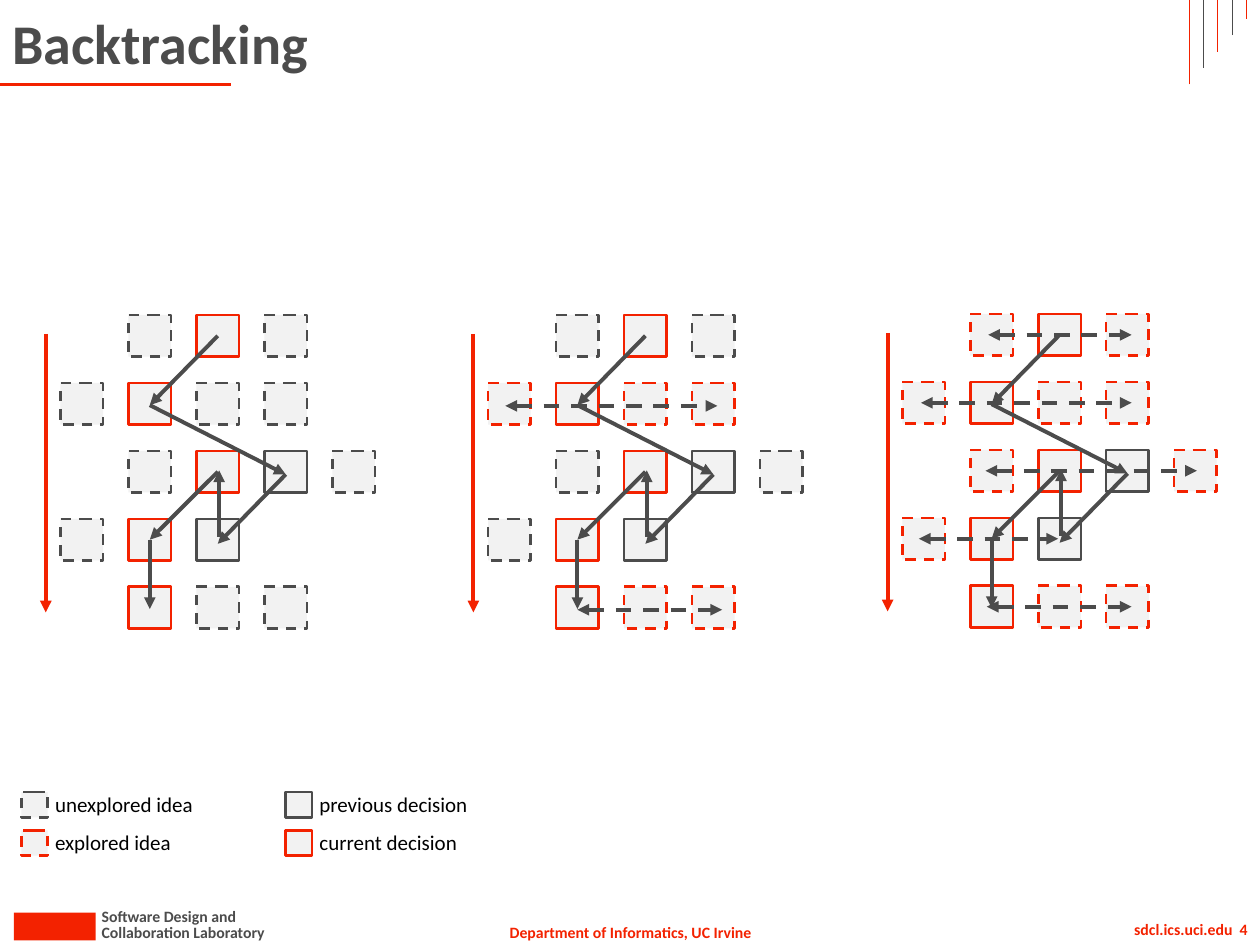
import pptx
import pptx.dml.color
import pptx.enum.dml
import pptx.enum.shapes
import pptx.enum.text
import pptx.oxml
import pptx.oxml.ns
import pptx.util
from pptx.util import Cm

RED, GREY, PALE, BLACK = "F32200", "4C4C4C", "F2F2F2", "000000"

# Kind of idea: outline colour, dashed
KINDS = {
    "u": (GREY, True),    # unexplored idea
    "e": (RED, True),     # explored idea
    "p": (GREY, False),   # previous decision
    "c": (RED, False),    # current decision
}

# Grid lengths in cm; a point (column, row) is the centre of that square
PITCH, SQUARE_WIDTH, SQUARE_HEIGHT = 1.37, 0.86, 0.84

# Each panel: left, top, rows of squares, dashed spans (row, first column, last column)
PANELS = [
    (1.22, 6.35, [".ucu.", "ucuu.", ".ucpu", "ucp..", ".cuu."], []),
    (9.84, 6.35, [".ucu.", "ecee.", ".ucpu", "ucp..", ".cee."],
     [(1.03, -0.06, 3.06), (4.03, 1, 3.13)]),
    (18.19, 6.33, [".ece.", "ecee.", ".ecpe", "ecp..", ".cee."],
     [(0, 0.95, 3.06), (1, -0.04, 3.06), (2, 0.91, 4.02),
      (3, -0.07, 1.98), (4, 0.93, 3.06)]),
]
TIME_ARROW = ((-0.53, -0.03), (-0.53, 4.07))
DECISION_STEPS = [
    ((2, 0), (1, 1.02)),
    ((1, 1.02), (3, 2.04)),
    ((3, 2.04), (2, 3.06)),
    ((2.02, 2.96), (2.02, 1.98)),
    ((2, 2), (1, 3)),
    ((1, 3), (1, 4.02)),
]

# Legend: label, kind, column, row, label width
LEGEND = [
    ("unexplored idea", "u", 0, 0, 3.33),
    ("explored idea", "e", 0, 1, 2.87),
    ("previous decision", "p", 1, 0, 3.53),
    ("current decision", "c", 1, 1, 3.3),
]

# Text, left, top, width, height, size, colour, alignment, wraps
FRAME_TEXTS = [
    ("Department of Informatics, UC Irvine", 9.98, 18.47, 5.46, 0.64, 9, RED, "CENTER", False),
    ("Collaboration Laboratory", 1.8, 18.47, 3.89, 0.64, 9, GREY, "LEFT", False),
    ("Software Design and", 1.8, 18.16, 3.28, 0.64, 9, GREY, "LEFT", False),
    ("sdcl.ics.uci.edu  4", 19.91, 18.42, 5.49, 0.64, 9, RED, "RIGHT", True),
    ("Backtracking", 0, 0, 23.5, 1.7, 32, GREY, "LEFT", True),
]
FOOTER_BLOCK = (0.28, 18.4, 1.65, 0.56)
CORNER_LINES = [1.7, 1.37, 1.04, 0.71, 0.38]


def colour(value):
    return pptx.dml.color.RGBColor.from_string(value)


def add_text(page, text, left, top, width, height, size, ink, align="LEFT",
             wraps=False, bold=True):
    box = page.shapes.add_textbox(Cm(left), Cm(top), Cm(width), Cm(height))
    frame = box.text_frame
    frame.text = text
    frame.word_wrap = wraps
    frame.vertical_anchor = pptx.enum.text.MSO_ANCHOR.MIDDLE
    para = frame.paragraphs[0]
    para.alignment = pptx.enum.text.PP_ALIGN[align]
    font = para.runs[0].font
    font.name, font.size, font.bold = "Calibri", pptx.util.Pt(size), bold
    font.color.rgb = colour(ink)


def style_line(line, ink, width, dashed):
    line.color.rgb = colour(ink)
    line.width = pptx.util.Pt(width)
    if dashed:
        line.dash_style = pptx.enum.dml.MSO_LINE.DASH


def add_rectangle(page, fill, left, top, width, height):
    box = page.shapes.add_shape(pptx.enum.shapes.MSO_SHAPE.RECTANGLE,
                                Cm(left), Cm(top), Cm(width), Cm(height))
    box.shadow.inherit = False
    box.fill.solid()
    box.fill.fore_color.rgb = colour(fill)
    box.line.fill.background()
    return box


def add_square(page, kind, *place):
    box = add_rectangle(page, PALE, *place)
    ink, dashed = KINDS[kind]
    style_line(box.line, ink, 1.5, dashed)
    box._element.spPr.xfrm.set("flipV", "1")  # dashes run from the lower left


def add_line(page, start, end, ink, width, dashed=False, arrows=()):
    """Draw a line; arrows names its arrow ends, headEnd before tailEnd."""
    connector = page.shapes.add_connector(
        pptx.enum.shapes.MSO_CONNECTOR.STRAIGHT,
        *(Cm(length) for length in (*start, *end)))
    style_line(connector.line, ink, width, dashed)
    outline = connector.line._get_or_add_ln()
    for arrow in arrows:
        tip = pptx.oxml.parse_xml(
            f'<a:{arrow} {pptx.oxml.ns.nsdecls("a")} type="triangle"/>')
        outline.append(tip)
    connector._element.spPr.append(
        pptx.oxml.parse_xml(f'<a:effectLst {pptx.oxml.ns.nsdecls("a")}/>'))


def add_panel(page, left, top, rows, spans):
    def centre(point):
        column, row = point
        return (left + SQUARE_WIDTH / 2 + column * PITCH,
                top + SQUARE_HEIGHT / 2 + row * PITCH)

    for row, kinds in enumerate(rows):
        for column, kind in enumerate(kinds):
            if kind in KINDS:
                add_square(page, kind, left + column * PITCH, top + row * PITCH,
                           SQUARE_WIDTH, SQUARE_HEIGHT)
    add_line(page, *map(centre, TIME_ARROW), RED, 2.25, arrows=["tailEnd"])
    for row, first, last in spans:
        add_line(page, centre((first, row)), centre((last, row)), GREY, 2.25,
                 dashed=True, arrows=["headEnd", "tailEnd"])
    for step in DECISION_STEPS:
        add_line(page, *map(centre, step), GREY, 2.25, arrows=["tailEnd"])


def main():
    deck = pptx.Presentation()
    deck.slide_width, deck.slide_height = Cm(25.4), Cm(19.05)
    page = deck.slides.add_slide(deck.slide_layouts[6])

    for entry in FRAME_TEXTS:
        add_text(page, *entry)
    add_rectangle(page, RED, *FOOTER_BLOCK)
    add_line(page, (0, 1.7), (4.65, 1.7), RED, 1.5)
    for index, length in enumerate(CORNER_LINES):
        x = 23.98 + index * 0.285
        add_line(page, (x, length), (x, 0), GREY if index % 2 else RED, 0.5)

    for panel in PANELS:
        add_panel(page, *panel)

    for label, kind, column, row, width in LEGEND:
        left, top = 0.43 + column * 5.33, 15.97 + row * 0.77
        add_square(page, kind, left, top, 0.53, 0.51)
        add_text(page, label, left + 0.43, top - 0.14, width, 0.76, 12, BLACK,
                 bold=False)

    deck.save("out.pptx")


if __name__ == "__main__":
    main()
